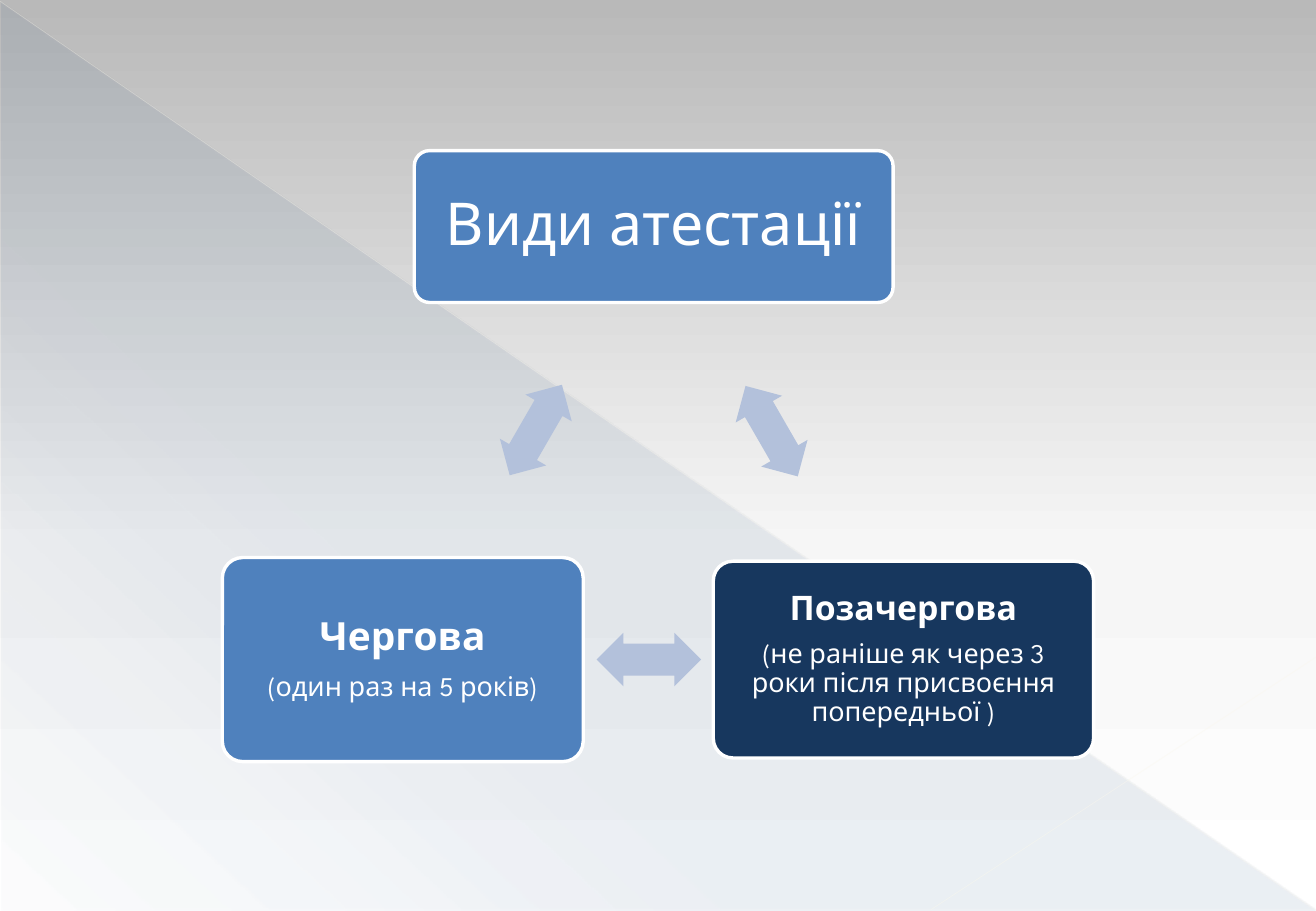
from lxml.etree import SubElement
from pptx import Presentation
from pptx.dml.color import RGBColor
from pptx.enum.shapes import MSO_CONNECTOR, MSO_SHAPE
from pptx.enum.text import MSO_ANCHOR, PP_ALIGN
from pptx.oxml.ns import qn
from pptx.util import Inches, Pt

WIDTH, HEIGHT = 10.83, 7.5
FONT = "League Spartan"
WHITE = RGBColor(0xFF, 0xFF, 0xFF)
BLUE = RGBColor(0x4F, 0x81, 0xBD)
NAVY = RGBColor(0x17, 0x37, 0x5E)
PALE = RGBColor(0xB3, 0xC1, 0xDB)
CREAM = RGBColor(0xF9, 0xF7, 0xEC)
IVORY = RGBColor(0xFA, 0xF8, 0xEE)

BACK = [(0, "B9B9B9", 100), (60, "F6F6F6", 100), (100, "FFFFFF", 100)]
SHADE = [(0, "1F497D", 10), (70, "1F497D", 8), (100, "1F497D", 1)]
LINES = [
    ((0, 0.01), (10.82, 7.49), CREAM, 0.39, 35),
    ((10.83, 5.41), (7.66, 7.49), IVORY, 0.47, 45),
]
BOXES = [
    ((3.41, 1.24, 3.94, 1.25), BLUE, 0.15, [("Види атестації", 35, False)]),
    ((5.87, 4.62, 3.13, 1.62), NAVY, 0.08, [
        ("Позачергова", 20, True),
        ("(не раніше як через 3 роки після присвоєння попередньої )", 16, False),
    ]),
    ((1.83, 4.59, 2.97, 1.68), BLUE, 0.1, [
        ("Чергова", 23, True),
        ("(один раз на 5 років)", 16, False),
    ]),
]
ARROWS = [(5.92, 3.33, 60), (4.91, 5.21, 180), (3.98, 3.32, 300)]
ARROW_SIZE = (0.86, 0.44)


def set_alpha(color, value):
    SubElement(color, qn("a:alpha"), val=str(value * 1000))


def set_grad(owner, fill, stops, angle):
    fill.gradient()
    grad = owner.find(".//" + qn("a:gradFill"))
    group = grad.find(qn("a:gsLst"))
    for old in list(group):
        group.remove(old)
    for place, shade, alpha in stops:
        stop = SubElement(group, qn("a:gs"), pos=str(place * 1000))
        set_alpha(SubElement(stop, qn("a:srgbClr"), val=shade), alpha)
    grad.find(qn("a:lin")).set("ang", str(angle * 60000))


def add_shape(slide, kind, frame):
    shape = slide.shapes.add_shape(kind, *map(Inches, frame))
    shape.shadow.inherit = False
    shape.line.fill.background()
    return shape


def add_line(slide, start, end, color, width, alpha):
    line = slide.shapes.add_connector(
        MSO_CONNECTOR.STRAIGHT, *map(Inches, start + end))
    line.line.color.rgb = color
    line.line.width = Pt(width)
    props = line.element.spPr
    set_alpha(props.find(".//" + qn("a:srgbClr")), alpha)
    SubElement(props, qn("a:effectLst"))


def add_box(slide, frame, color, inset, rows):
    box = add_shape(slide, MSO_SHAPE.ROUNDED_RECTANGLE, frame)
    box.adjustments[0] = 0.1
    box.fill.solid()
    box.fill.fore_color.rgb = color
    box.line.color.rgb = WHITE
    box.line.width = Pt(2)
    body = box.text_frame
    body.word_wrap = True
    body.vertical_anchor = MSO_ANCHOR.MIDDLE
    body.margin_left = body.margin_right = Inches(inset)
    body.margin_top = body.margin_bottom = Inches(inset)
    body.text = "\n".join(text for text, size, bold in rows)
    for para, (text, size, bold) in zip(body.paragraphs, rows):
        para.alignment = PP_ALIGN.CENTER
        para.line_spacing = 0.9
        para.space_after = Pt(0.35 * size)
        font = para.runs[0].font
        font.name = FONT
        font.size = Pt(size)
        font.bold = bold
        font.color.rgb = WHITE


def add_arrow(slide, left, top, turn):
    arrow = add_shape(slide, MSO_SHAPE.LEFT_RIGHT_ARROW, (left, top, *ARROW_SIZE))
    arrow.adjustments[0] = 0.6
    arrow.adjustments[1] = 0.5
    arrow.rotation = turn
    arrow.fill.solid()
    arrow.fill.fore_color.rgb = PALE


def main():
    deck = Presentation()
    deck.slide_width = Inches(WIDTH)
    deck.slide_height = Inches(HEIGHT)
    slide = deck.slides.add_slide(deck.slide_layouts[6])
    set_grad(slide.element, slide.background.fill, BACK, 90)
    wedge = add_shape(slide, MSO_SHAPE.RIGHT_TRIANGLE, (0.01, 0.02, 10.82, 7.48))
    set_grad(wedge.element, wedge.fill, SHADE, 133)
    for line in LINES:
        add_line(slide, *line)
    for box in BOXES:
        add_box(slide, *box)
    for arrow in ARROWS:
        add_arrow(slide, *arrow)
    deck.save("out.pptx")


if __name__ == "__main__":
    main()
